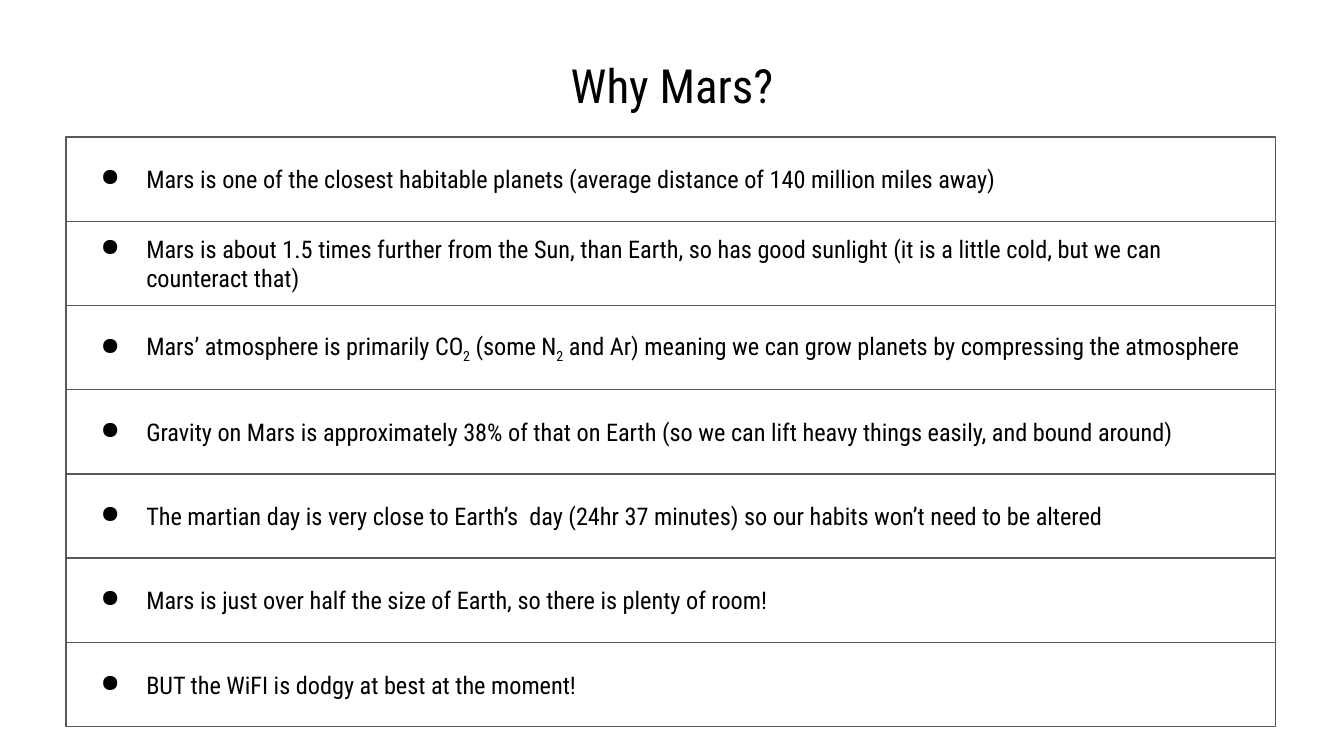
from lxml.etree import SubElement
from pptx import Presentation
from pptx.dml.color import RGBColor
from pptx.enum.shapes import MSO_SHAPE
from pptx.enum.text import MSO_ANCHOR, PP_ALIGN
from pptx.oxml.ns import qn
from pptx.util import Inches, Pt

HUES = {"page": "FFFFFF", "text": "000000", "line": "595959"}
FACE = "Roboto Condensed"
TOP, STEP = 1.02, 3.76 / 6

# Text between bars is set as subscript.
FACTS = [
    "Mars is one of the closest habitable planets (average distance of 140 million miles away)",
    "Mars is about 1.5 times further from the Sun, than Earth, so has good sunlight "
    "(it is a little cold, but we can counteract that)",
    "Mars’ atmosphere is primarily CO|2| (some N|2| and Ar) meaning we can grow planets "
    "by compressing the atmosphere",
    "Gravity on Mars is approximately 38% of that on Earth "
    "(so we can lift heavy things easily, and bound around)",
    "The martian day is very close to Earth’s  day (24hr 37 minutes) "
    "so our habits won’t need to be altered",
    "Mars is just over half the size of Earth, so there is plenty of room!",
    "BUT the WiFI is dodgy at best at the moment!",
]


def write(shape, text, size, align, anchor):
    """Fill the shape with one paragraph and return it."""
    frame = shape.text_frame
    form = {"word_wrap": True, "vertical_anchor": anchor}
    for side in ("left", "right", "top", "bottom"):
        form[f"margin_{side}"] = Inches(0.1)
    for name, value in form.items():
        setattr(frame, name, value)
    para = frame.paragraphs[0]
    para.alignment = align
    for i, part in enumerate(text.split("|")):
        run = para.add_run()
        run.text = part
        for name, value in {"name": FACE, "size": Pt(size)}.items():
            setattr(run.font, name, value)
        run.font.color.rgb = RGBColor.from_string(HUES["text"])
        if i % 2:
            run.font._element.set("baseline", "-25000")
    return para


deck = Presentation()
deck.slide_width, deck.slide_height = Inches(10), Inches(10 * 9 / 16)
slide = deck.slides.add_slide(deck.slide_layouts[6])
slide.background.fill.solid()
slide.background.fill.fore_color.rgb = RGBColor.from_string(HUES["page"])

title = slide.shapes.add_textbox(Inches(0.34), Inches(0.32), Inches(9.32), Inches(0.63))
write(title, "Why Mars?", 25.2, PP_ALIGN.CENTER, MSO_ANCHOR.TOP)

for row, fact in enumerate(FACTS):
    box = slide.shapes.add_shape(
        MSO_SHAPE.RECTANGLE, Inches(0.49), Inches(TOP + row * STEP), Inches(9), Inches(STEP)
    )
    box.shadow.inherit = False
    box.fill.background()
    box.line.color.rgb = RGBColor.from_string(HUES["line"])
    box.line.width = Pt(0.75)
    para = write(box, fact, 13, PP_ALIGN.LEFT, MSO_ANCHOR.MIDDLE)
    props = para._p.get_or_add_pPr()
    props.set("marL", str(Inches(0.5)))
    props.set("indent", str(Inches(-0.34)))
    tint = SubElement(props, qn("a:buClr"))
    SubElement(tint, qn("a:srgbClr"), val=HUES["text"])
    SubElement(props, qn("a:buChar"), char="●")

deck.save("out.pptx")
